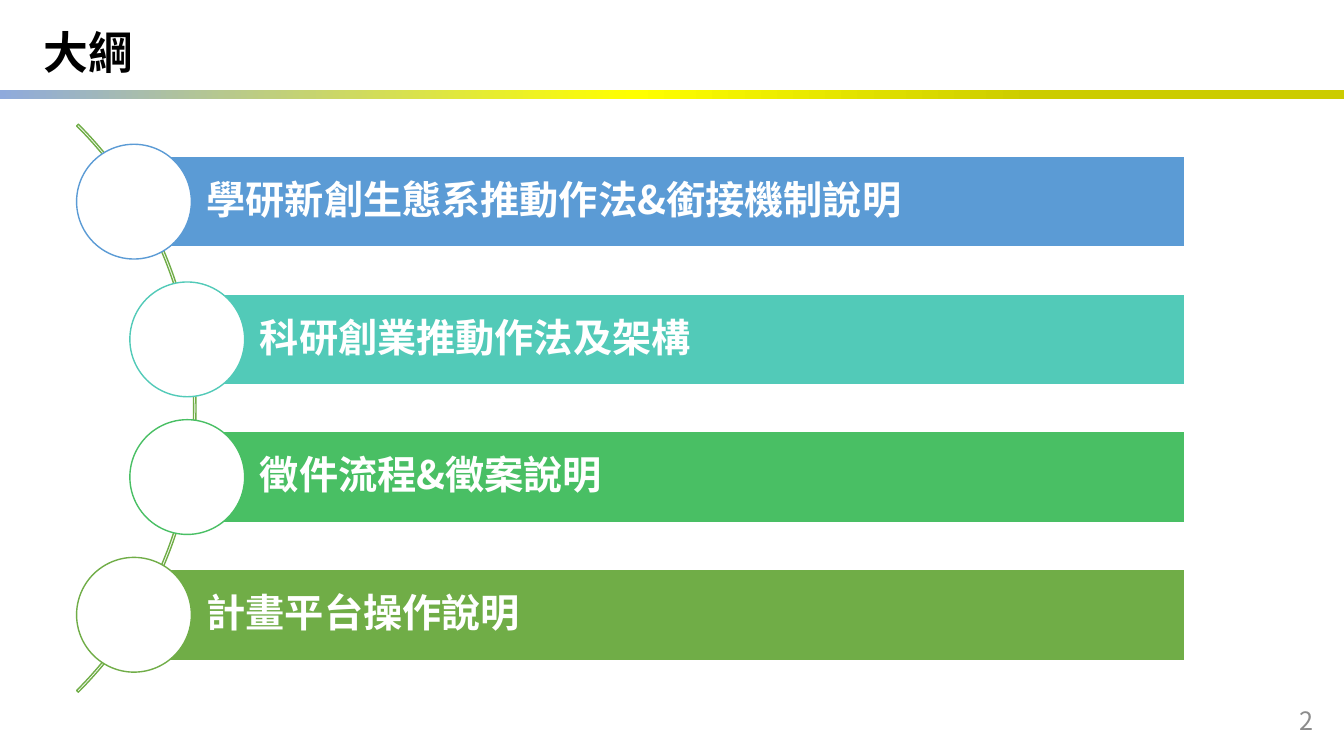
from dataclasses import dataclass

from lxml.etree import SubElement
from pptx import Presentation
from pptx.dml.color import RGBColor as Rgb
from pptx.enum.shapes import MSO_SHAPE as Kind
from pptx.enum.text import MSO_ANCHOR as Anchor, PP_ALIGN as Align
from pptx.oxml.ns import qn
from pptx.util import Inches, Pt


@dataclass(frozen=True)
class Theme:
    """Colours, font and type sizes of the slide."""
    font: str = "Noto Sans CJK SC"
    white: str = "FFFFFF"
    black: str = "000000"
    grey: str = "8C8C8C"
    arc: str = "70AD47"
    rows: tuple = ("5B9BD5", "52CAB8", "49BF64", "70AD47")
    band: tuple = ((0, "8FAADC"), (47, "FFFF00"), (77, "CCCC00"), (100, "CCCC00"))
    title: int = 32
    item: int = 28
    page: int = 18


THEME = Theme()
WIDE, HIGH = 13.33, 7.5
ITEMS = (
    ("學研新創生態系推動作法&銜接機制說明", 0),
    ("科研創業推動作法及架構", 1.16),
    ("徵件流程&徵案說明", 1.16),
    ("計畫平台操作說明", 0),
)


def place(box):
    """Turn a box in inches into slide lengths."""
    return [Inches(part) for part in box]


def draw(slide, kind, box, fill=None, line=None, weight=1):
    """Add a flat shape with the given fill and outline."""
    shape = slide.shapes.add_shape(kind, *place(box))
    shape.shadow.inherit = False
    if fill:
        shape.fill.solid()
        shape.fill.fore_color.rgb = Rgb.from_string(fill)
    else:
        shape.fill.background()
    if line:
        shape.line.color.rgb = Rgb.from_string(line)
        shape.line.width = Pt(weight)
    else:
        shape.line.fill.background()
    return shape


def write(shape, text, size, color, bold=False, align=Align.LEFT, lead=0.9):
    """Set one middle-anchored paragraph in a shape."""
    frame = shape.text_frame
    frame.text = text
    frame.word_wrap = True
    frame.vertical_anchor = Anchor.MIDDLE
    para = frame.paragraphs[0]
    para.alignment, para.line_spacing = align, lead
    for run in para.runs:
        font = run.font
        font.name, font.size, font.bold = THEME.font, Pt(size), bold
        font.color.rgb = Rgb.from_string(color)
        SubElement(font._element, qn("a:ea"), typeface=THEME.font)
    return frame


def add_head(slide, box):
    """Place the title and the gradient band at the foot of the box."""
    left, top, wide, high = box
    band = draw(slide, Kind.RECTANGLE, (left, top + high - 0.09, wide, 0.09))
    band.fill.gradient()
    band.fill.gradient_angle = 0
    stops = band._element.spPr.find(".//" + qn("a:gsLst"))
    for stop in list(stops):
        stops.remove(stop)
    for share, color in THEME.band:
        stop = SubElement(stops, qn("a:gs"), pos=str(share * 1000))
        SubElement(stop, qn("a:srgbClr"), val=color)
    title = slide.shapes.title
    title.left, title.top, title.width, title.height = place(
        (left + 0.33, top + 0.1, 8.62, 0.9))
    write(title, "大綱", THEME.title, THEME.black, bold=True)


def add_list(slide, box):
    """Draw the arc and its rows on a grid of half bars."""
    left, top, wide, high = box
    unit = high / (3 * len(ITEMS) + 1)
    ring, ball = 17.5 * unit, 2.5 * unit
    arc = draw(slide, Kind.BLOCK_ARC,
               (left + 2.6 * unit - ring, top + (high - ring) / 2, ring, ring),
               line=THEME.arc)
    for spot, value in enumerate((189, 27, 0.003)):
        arc.adjustments[spot] = value
    for row, ((text, shift), color) in enumerate(zip(ITEMS, THEME.rows)):
        inset = shift * unit + ball / 2
        edge = top + (1 + 3 * row) * unit
        bar = draw(slide, Kind.RECTANGLE,
                   (left + inset, edge, wide - inset, 2 * unit),
                   color, THEME.white, 1.5)
        frame = write(bar, text, THEME.item, THEME.white, bold=True)
        frame.margin_left = Inches(0.72)
        frame.margin_right = frame.margin_top = frame.margin_bottom = Inches(0.08)
        draw(slide, Kind.OVAL,
             (left + shift * unit, edge + unit - ball / 2, ball, ball),
             THEME.white, color)


def add_page(slide, box):
    """Write the page number at the right of the box."""
    note = slide.shapes.add_textbox(*place(box))
    write(note, "2", THEME.page, THEME.grey, align=Align.RIGHT, lead=1.0)


def main():
    """Build and save the outline slide."""
    deck = Presentation()
    deck.slide_width, deck.slide_height = Inches(WIDE), Inches(HIGH)
    slide = deck.slides.add_slide(deck.slide_layouts[5])
    add_head(slide, (0, 0, WIDE, 0.98))
    add_list(slide, (0.76, 1.09, 10.99, 5.92))
    add_page(slide, (WIDE - 3.2, HIGH - 0.55, 3, 0.4))
    deck.save("out.pptx")


if __name__ == "__main__":
    main()
